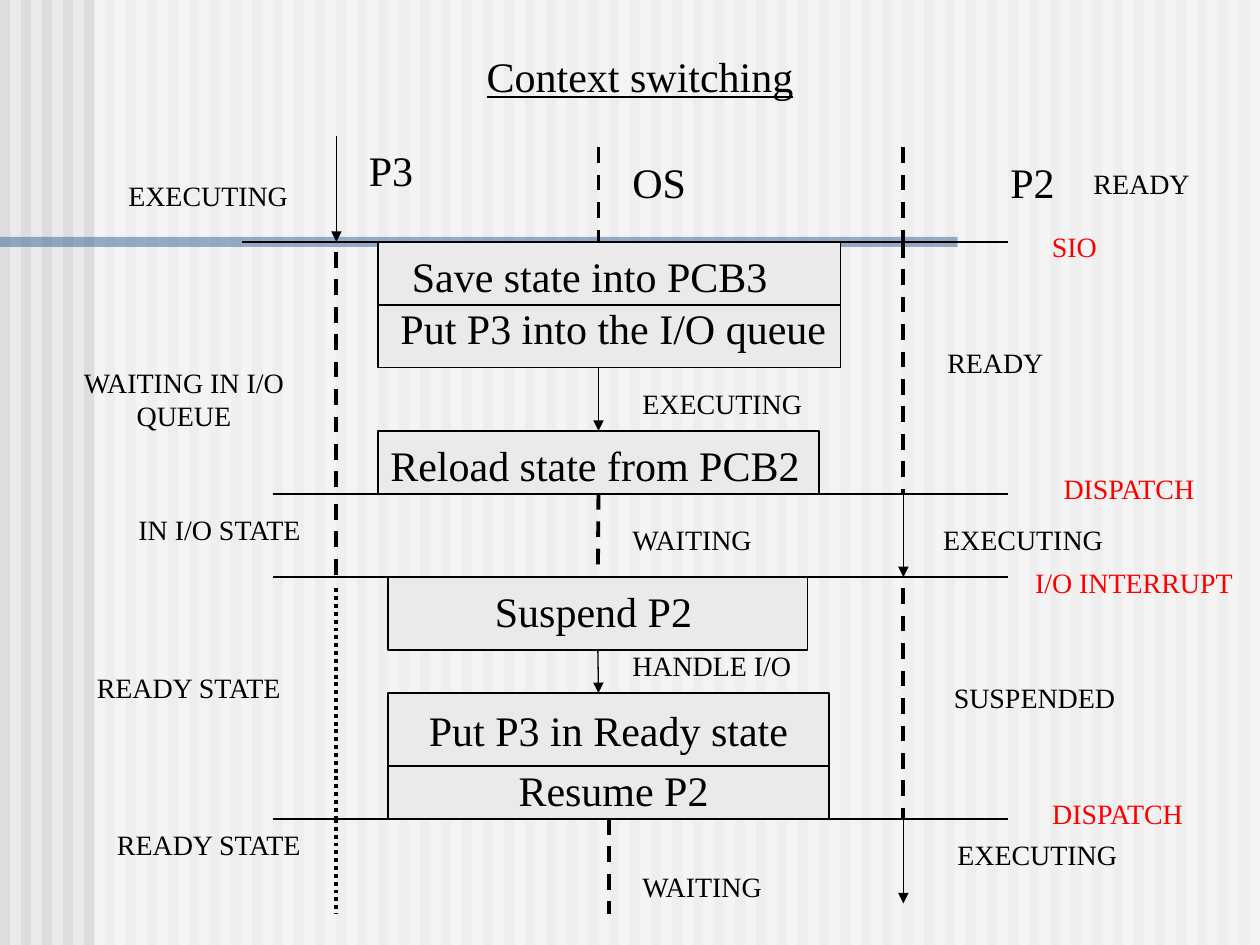
import pptx
import pptx.dml.color
import pptx.enum.dml
import pptx.enum.shapes
import pptx.enum.text
import pptx.oxml.ns
import pptx.util
from lxml import etree

Inches, Pt = pptx.util.Inches, pptx.util.Pt
RGBColor = pptx.dml.color.RGBColor
Align, Anchor = pptx.enum.text.PP_ALIGN, pptx.enum.text.MSO_ANCHOR
Dash = pptx.enum.dml.MSO_LINE

BLACK = RGBColor(0x00, 0x00, 0x00)
RED = RGBColor(0xFF, 0x00, 0x00)
WHITE = RGBColor(0xFF, 0xFF, 0xFF)
PAPER = RGBColor(0xEA, 0xEA, 0xEA)
STRIPE = RGBColor(0xDD, 0xDD, 0xDD)
BLUE = RGBColor(0x33, 0x66, 0x99)

TOP, BOTTOM = 0, 2  # connection sites of a rectangle
LARGE, SMALL = 24, 16
SIO, DISPATCH, INTERRUPT, RESUME = 1.92, 3.92, 4.58, 6.5  # event heights
P3_X, OS_X, P2_X = 2.67, 4.75, 7.17  # process lanes


def add_xml(parent, tag, **attributes):
    return etree.SubElement(parent, pptx.oxml.ns.qn(tag), attributes)


class Diagram:
    font_name = "Times New Roman"

    def __init__(self, page):
        self.page = page

    def put_text(self, shape, text, size, color=BLACK, align=Align.LEFT, **extra):
        para = shape.text_frame.paragraphs[0]
        para.alignment = align
        span = para.add_run()
        span.text = text
        span.font.color.rgb = color
        style = {"name": self.font_name, "size": Pt(size), "bold": False, **extra}
        for name, value in style.items():
            setattr(span.font, name, value)

    def title(self, text, left, top, width, height):
        box = self.page.shapes.title
        box.element.getparent().append(box.element)  # in front of the backdrop
        place = {"left": left, "top": top, "width": width, "height": height}
        for name, value in place.items():
            setattr(box, name, Inches(value))
        self.frame(box)
        self.put_text(box, text, LARGE, align=Align.CENTER, underline=True)

    def frame(self, box):
        style = {"word_wrap": True, "vertical_anchor": Anchor.TOP,
                 "margin_left": Inches(0.1), "margin_right": Inches(0.1),
                 "margin_top": Inches(0.07), "margin_bottom": Inches(0.05)}
        for name, value in style.items():
            setattr(box.text_frame, name, value)

    def label(self, text, left, top, width, size=SMALL, color=BLACK,
              align=Align.LEFT, height=None):
        height = height or (0.5 if size == LARGE else 0.37)
        box = self.page.shapes.add_textbox(
            Inches(left), Inches(top), Inches(width), Inches(height))
        self.frame(box)
        self.put_text(box, text, size, color, align)

    def rectangle(self, left, top, width, height, fill, outlined=False, alpha=None):
        shape = self.page.shapes.add_shape(
            pptx.enum.shapes.MSO_SHAPE.RECTANGLE,
            Inches(left), Inches(top), Inches(width), Inches(height))
        shape.shadow.inherit = False
        shape.fill.solid()
        shape.fill.fore_color.rgb = fill
        if alpha:
            tint = next(shape.element.spPr.iter(pptx.oxml.ns.qn("a:srgbClr")))
            add_xml(tint, "a:alpha", val=str(alpha * 1000))
        if outlined:
            shape.line.color.rgb = BLACK
            shape.line.width = Pt(0.75)
        else:
            shape.line.fill.background()
        return shape

    def line(self, x1, y1, x2, y2, dash=None, arrow=False, begin=None, end=None):
        link = self.page.shapes.add_connector(
            pptx.enum.shapes.MSO_CONNECTOR.STRAIGHT,
            Inches(x1), Inches(y1), Inches(x2), Inches(y2))
        if begin:
            link.begin_connect(begin, BOTTOM)
        if end:
            link.end_connect(end, TOP)
        link.line.color.rgb = BLACK
        link.line.width = Pt(2.25 if dash else 0.75)
        if dash:
            link.line.dash_style = dash
        properties = link.element.spPr
        if arrow:
            add_xml(properties.find(pptx.oxml.ns.qn("a:ln")), "a:tailEnd", type="triangle")
        add_xml(properties, "a:effectLst")


def main():
    deck = pptx.Presentation()
    deck.slide_width, deck.slide_height = Inches(10), Inches(7.5)
    page = deck.slides.add_slide(deck.slide_layouts[5])
    page.background.fill.solid()
    page.background.fill.fore_color.rgb = PAPER
    diagram = Diagram(page)

    # Striped backdrop, veil and blue bar
    for index in range(60):
        diagram.rectangle(index / 6, 0, 0.08, 7.5, STRIPE)
    diagram.rectangle(0.75, 0, 9.25, 7.5, WHITE, alpha=50)
    diagram.rectangle(0, 1.88, 7.6, 0.08, BLUE, alpha=50)

    diagram.title("Context switching", 2.79, 0.33, 4.58, 0.5)

    # Steps of the operating system
    save, queue, reload_step, suspend, ready, resume = [
        diagram.rectangle(*place, PAPER, outlined=True) for place in (
            (3, SIO, 3.67, 0.5), (3, 2.42, 3.67, 0.5), (3, 3.42, 3.5, 0.5),
            (3.08, INTERRUPT, 3.33, 0.58), (3.08, 5.5, 3.5, 0.58),
            (3.08, 6.08, 3.5, 0.42))]
    ready.text_frame.word_wrap = False
    ready.text_frame.vertical_anchor = Anchor.MIDDLE
    diagram.put_text(ready, "Put P3 in Ready state", LARGE, align=Align.CENTER)
    for text, left, top, align in (
            ("Save state into PCB3", 3.17, SIO, Align.LEFT),
            ("Put P3 into the I/O queue", 3.08, 2.33, Align.LEFT),
            ("Reload state from PCB2", 3, 3.42, Align.LEFT),
            ("Suspend P2", 2.67, INTERRUPT, Align.CENTER),
            ("Resume P2", 2.83, 6, Align.CENTER)):
        diagram.label(text, left, top, 4.08, LARGE, align=align)

    # Event lines
    for left, height in ((1.92, SIO), (2.17, DISPATCH), (2.17, INTERRUPT), (2.17, RESUME)):
        diagram.line(left, height, 8, height)

    # Lanes: solid arrow while executing, dashes while waiting, dots while ready
    for x, top, bottom, dash in (
            (P3_X, 1.08, SIO, None),
            (P3_X, 2, DISPATCH, Dash.DASH),
            (P3_X, 4, INTERRUPT, Dash.DASH),
            (P3_X, 4.67, RESUME, Dash.ROUND_DOT),
            (P3_X, RESUME, 7.25, Dash.ROUND_DOT),
            (OS_X, 1.17, SIO, Dash.DASH),
            (P2_X, 1.17, SIO, Dash.DASH),
            (P2_X, SIO, DISPATCH, Dash.DASH),
            (P2_X, DISPATCH, INTERRUPT, None),
            (P2_X, 4.67, RESUME, Dash.DASH),
            (P2_X, RESUME, 7.17, None)):
        diagram.line(x, top, x, bottom, dash, arrow=dash is None)

    # Links between the steps
    diagram.line(OS_X, 2.92, OS_X, 3.42, arrow=True, end=reload_step)
    diagram.line(OS_X, DISPATCH, OS_X, INTERRUPT, Dash.DASH, begin=reload_step, end=suspend)
    diagram.line(OS_X, 5.17, OS_X, 5.5, arrow=True, begin=suspend)
    diagram.line(4.83, RESUME, 4.83, 7.25, Dash.DASH, begin=resume)

    # Process names
    for text, left, top in (("P3", 2.83, 1.08), ("OS", 4.92, 1.17), ("P2", 7.92, 1.17)):
        diagram.label(text, left, top, 1, LARGE)

    # Process states
    for text, left, top, width in (
            ("EXECUTING", 0.92, 1.35, 1.83), ("IN I/O STATE", 1, 4, 1.58),
            ("READY STATE", 0.67, 5.25, 1.92), ("READY STATE", 0.83, 6.5, 1.75),
            ("EXECUTING", 5, 3, 1.58), ("WAITING", 4.92, 4.08, 1.58),
            ("HANDLE I/O", 4.92, 5.08, 1.83), ("WAITING", 5, 6.83, 1.58),
            ("READY", 8.58, 1.25, 1.25), ("READY", 7.42, 2.67, 1.58),
            ("EXECUTING", 7.5, 6.58, 1.58)):
        diagram.label(text, left, top, width)
    diagram.label("WAITING IN I/O QUEUE", 0.5, 2.83, 1.92, align=Align.CENTER, height=0.64)
    for text, left, top in (("EXECUTING", 7.33, 4.08), ("SUSPENDED", 7.42, 5.33)):
        diagram.label(text, left, top, 1.58, align=Align.CENTER)

    # Event names
    for text, left, top, width, align in (
            ("SIO", 8.25, 1.75, 1.42, Align.LEFT),
            ("DISPATCH", 8.17, 3.67, 1.58, Align.CENTER),
            ("I/O INTERRUPT", 8, 4.42, 2, Align.CENTER),
            ("DISPATCH", 8.08, 6.25, 1.58, Align.CENTER)):
        diagram.label(text, left, top, width, color=RED, align=align)

    deck.save("out.pptx")


if __name__ == "__main__":
    main()
